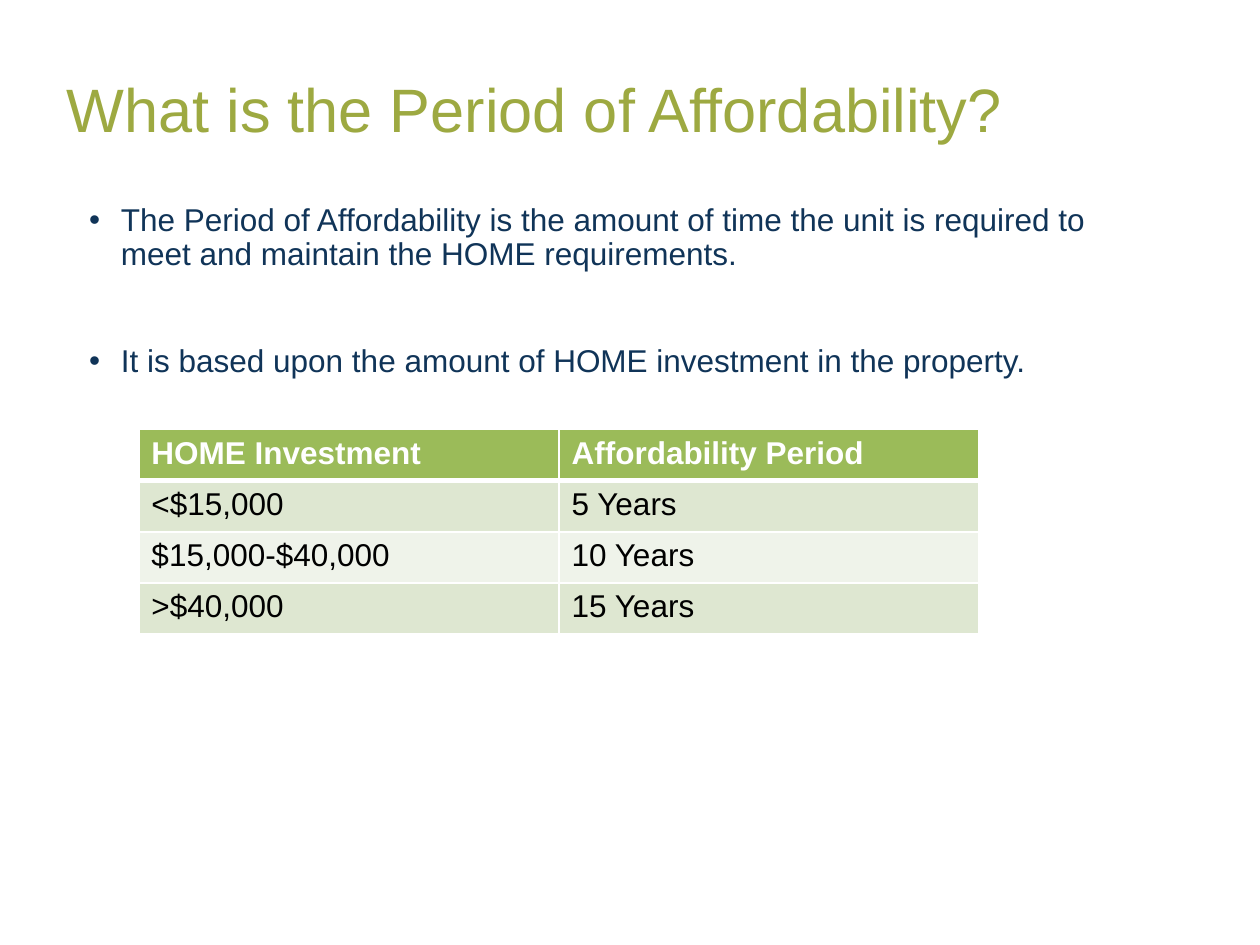
from dataclasses import dataclass

from lxml import etree
from pptx import Presentation
from pptx import util as u
from pptx.dml.color import RGBColor
from pptx.enum import text
from pptx.oxml import ns


@dataclass(frozen=True)
class Theme:
    font: str = "Arial"
    title: str = "9DA941"
    body: str = "103458"
    header: str = "9BBB59"
    bands: tuple = ("DEE7D1", "EFF3EA")
    white: str = "FFFFFF"
    black: str = "000000"
    title_size: int = 35
    body_size: int = 18


THEME = Theme()
BULLETS = [
    "The Period of Affordability is the amount of time the unit is required to "
    "meet and maintain the HOME requirements.",
    "It is based upon the amount of HOME investment in the property.",
]
ROWS = [
    ("HOME Investment", "Affordability Period"),
    ("<$15,000", "5 Years"),
    ("$15,000-$40,000", "10 Years"),
    (">$40,000", "15 Years"),
]


def add_text(p, content, size=THEME.body_size, color=THEME.black, bold=False):
    r = p.add_run()
    r.text = content
    r.font.name = THEME.font
    r.font.size = u.Pt(size)
    r.font.bold = bold
    r.font.color.rgb = RGBColor.from_string(color)


def place(sp, box):
    sp.left, sp.top, sp.width, sp.height = (u.Cm(v) for v in box)


def add_bullet(p, indent):
    pPr = p._p.get_or_add_pPr()
    pPr.set("marL", str(u.Cm(indent)))
    pPr.set("indent", str(-u.Cm(indent)))
    etree.SubElement(pPr, ns.qn("a:buFont"), typeface=THEME.font)
    etree.SubElement(pPr, ns.qn("a:buChar"), char="•")


def set_borders(cell, **widths):
    tcPr = cell._tc.get_or_add_tcPr()
    for i, (side, width) in enumerate(widths.items()):
        ln = etree.Element(ns.qn(f"a:ln{side}"), w=str(u.Pt(width)))
        fill = etree.SubElement(ln, ns.qn("a:solidFill"))
        etree.SubElement(fill, ns.qn("a:srgbClr"), val=THEME.white)
        tcPr.insert(i, ln)


def build_title(s, box, content):
    sp = s.shapes.title
    place(sp, box)
    tf = sp.text_frame
    tf.word_wrap = True
    tf.auto_size = text.MSO_AUTO_SIZE.NONE
    tf.vertical_anchor = text.MSO_ANCHOR.MIDDLE
    p = tf.paragraphs[0]
    p.alignment = text.PP_ALIGN.LEFT
    add_text(p, content, size=THEME.title_size, color=THEME.title)


def build_bullets(s, box, items):
    tf = s.shapes.add_textbox(*(u.Cm(v) for v in box)).text_frame
    tf.word_wrap = True
    for i, item in enumerate(items):
        p = tf.add_paragraph() if i else tf.paragraphs[0]
        add_bullet(p, 0.64)
        p.line_spacing = 0.9
        p.space_before = u.Pt(42 if i else 0)
        add_text(p, item, color=THEME.body)


def build_table(s, box, rows):
    frame = s.shapes.add_table(len(rows), len(rows[0]), *(u.Cm(v) for v in box))
    for i, row in enumerate(rows):
        header = i == 0
        for j, content in enumerate(row):
            cell = frame.table.cell(i, j)
            cell.fill.solid()
            fill = THEME.header if header else THEME.bands[(i - 1) % 2]
            cell.fill.fore_color.rgb = RGBColor.from_string(fill)
            set_borders(cell, L=1, R=1, T=3 if i == 1 else 1, B=3 if header else 1)
            color = THEME.white if header else THEME.black
            add_text(cell.text_frame.paragraphs[0], content, color=color, bold=header)


def main():
    prs = Presentation()
    prs.slide_width, prs.slide_height = u.Cm(25.4), u.Cm(19.05)
    s = prs.slides.add_slide(prs.slide_layouts[5])
    build_title(s, (1.09, 1.3, 23.24, 1.75), "What is the Period of Affordability?")
    build_bullets(s, (1.55, 3.99, 21.11, 2.77), BULLETS)
    build_table(s, (2.8, 8.66, 16.94, 4.12), ROWS)
    prs.save("out.pptx")


if __name__ == "__main__":
    main()
